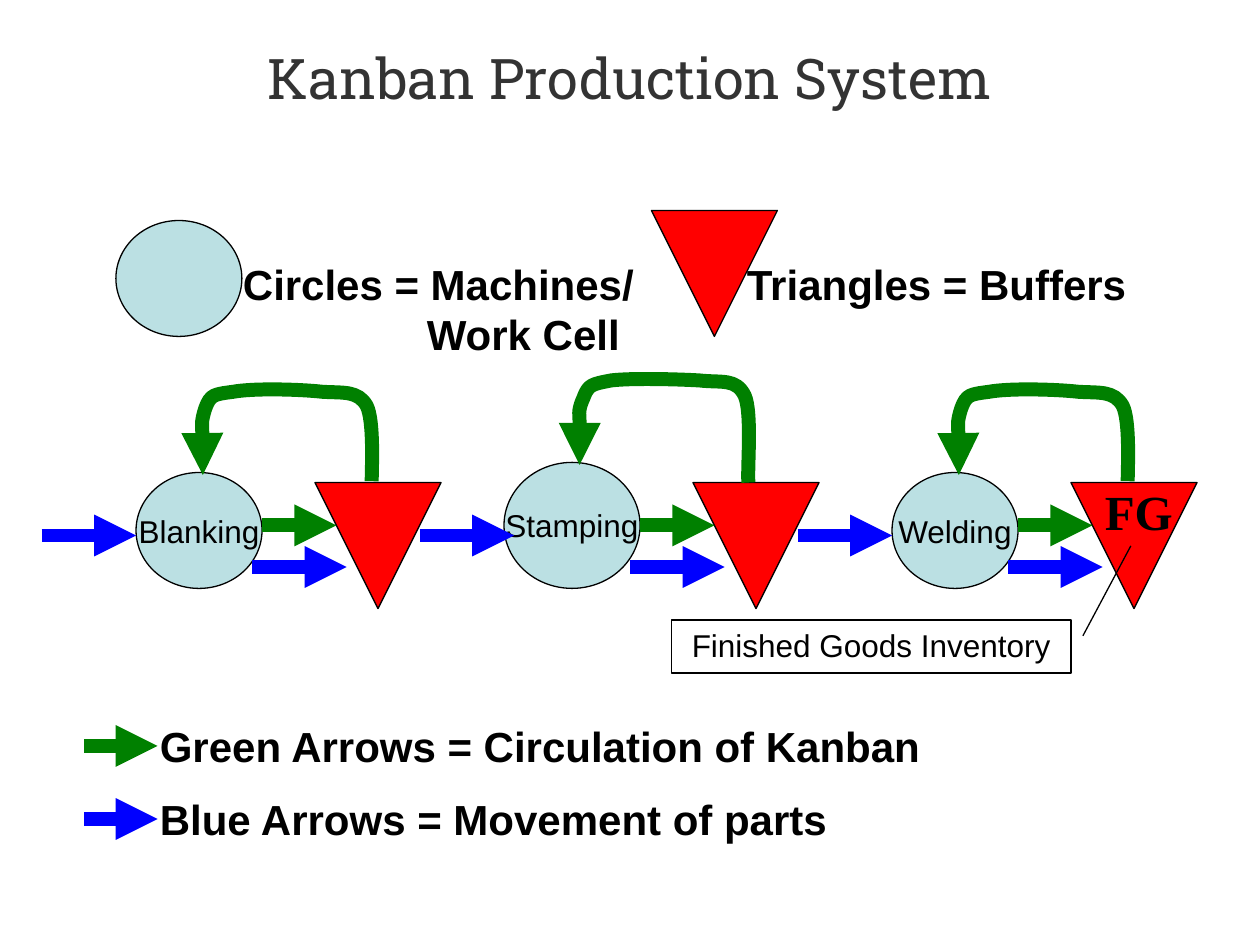
from lxml import etree
from pptx import Presentation
from pptx.dml.color import RGBColor
from pptx.enum import shapes, text
from pptx.oxml import ns
from pptx.util import Inches, Pt

BLACK = RGBColor(0, 0, 0)
GRAY = RGBColor(0x33, 0x33, 0x33)
AQUA = RGBColor(0xBB, 0xE0, 0xE3)
RED = RGBColor(0xFF, 0, 0)
GREEN = RGBColor(0, 0x80, 0)
BLUE = RGBColor(0, 0, 0xFF)

# Kanban loops: start point, then three points per curve, x from the station
LOW = [(2.95, 3.82), (2.95, 3.72), (2.97, 3.34), (2.91, 3.22),
       (2.84, 3.1), (2.73, 3.12), (2.56, 3.11),
       (2.38, 3.09), (2.01, 3.08), (1.85, 3.11),
       (1.7, 3.13), (1.67, 3.13), (1.63, 3.24),
       (1.59, 3.36), (1.61, 3.66), (1.61, 3.77)]
HIGH = [(2.94, 3.83), (2.93, 3.72), (2.97, 3.27), (2.91, 3.14),
        (2.84, 3), (2.73, 3.04), (2.55, 3.02),
        (2.38, 3.01), (2.01, 3), (1.85, 3.02),
        (1.7, 3.05), (1.67, 3.05), (1.63, 3.16),
        (1.58, 3.27), (1.61, 3.58), (1.6, 3.69)]

# Name, circle box, loop
CELLS = [("Blanking", (1.08, 3.75, 1, 0.92), LOW),
         ("Stamping", (4, 3.67, 1.08, 1), HIGH),
         ("Welding", (7.08, 3.75, 1, 0.92), LOW)]


def write(para, words, size, font="Arial", bold=False, color=BLACK):
    para.text = words
    para.font.size = Pt(size)
    para.font.name = font
    para.font.bold = bold
    para.font.color.rgb = color


def label(slide, box, words, size=24, font="Arial", bold=True, color=BLACK):
    frame = slide.shapes.add_textbox(*map(Inches, box)).text_frame
    frame.word_wrap = True
    write(frame.paragraphs[0], words, size, font, bold, color)
    return frame


def shape(slide, kind, box, fill=None):
    item = slide.shapes.add_shape(kind, *map(Inches, box))
    item.shadow.inherit = False
    if fill is None:
        item.fill.background()
    else:
        item.fill.solid()
        item.fill.fore_color.rgb = fill
    item.line.color.rgb = BLACK
    item.line.width = Pt(0.75)
    return item


def circle(slide, box, name=None):
    item = shape(slide, shapes.MSO_SHAPE.OVAL, box, AQUA)
    if name:
        frame = item.text_frame
        frame.word_wrap = False
        frame.vertical_anchor = text.MSO_ANCHOR.MIDDLE
        write(frame.paragraphs[0], name, 18)
        frame.paragraphs[0].alignment = text.PP_ALIGN.CENTER


def buffer(slide, left, top):
    kind = shapes.MSO_SHAPE.ISOSCELES_TRIANGLE
    shape(slide, kind, (left, top, 1, 1), RED).rotation = 180


def stroke(item, color):
    """Thick line with an arrowhead at its end."""
    item.line.color.rgb = color
    item.line.width = Pt(8)
    etree.SubElement(item.line._get_or_add_ln(), ns.qn("a:tailEnd"),
                     type="triangle")


def arrow(slide, left, right, y, color):
    item = slide.shapes.add_connector(
        shapes.MSO_CONNECTOR.STRAIGHT,
        Inches(left), Inches(y), Inches(right), Inches(y))
    stroke(item, color)
    etree.SubElement(item._element.spPr, ns.qn("a:effectLst"))


def loop(slide, points, shift):
    spots = [(Inches(x + shift), Inches(y)) for x, y in points]
    build = slide.shapes.build_freeform(*spots[0])
    build.add_line_segments(spots[1:], close=False)
    item = build.convert_to_shape()
    item.shadow.inherit = False
    item.fill.background()
    stroke(item, GREEN)
    # Turn each three line segments into one Bezier curve
    track = item._element.find(".//" + ns.qn("a:path"))
    steps = track.findall(ns.qn("a:lnTo"))
    for i in range(0, len(steps), 3):
        curve = etree.SubElement(track, ns.qn("a:cubicBezTo"))
        for step in steps[i:i + 3]:
            curve.append(step[0])
            track.remove(step)


def station(slide, shift, name, box, points):
    circle(slide, box, name)
    buffer(slide, 2.5 + shift, 3.83)
    arrow(slide, 0.33 + shift, 1.08 + shift, 4.25, BLUE)
    loop(slide, points, shift)
    arrow(slide, 2 + shift, 2.75 + shift, 4.5, BLUE)
    arrow(slide, 2.08 + shift, 2.67 + shift, 4.17, GREEN)


def callout(slide):
    item = shape(slide, shapes.MSO_SHAPE.LINE_CALLOUT_1,
                 (5.33, 4.92, 3.17, 0.42))
    for i, value in enumerate((0.3, 1.03, -1.4, 1.15)):
        item.adjustments[i] = value
    frame = item.text_frame
    frame.word_wrap = True
    frame.vertical_anchor = text.MSO_ANCHOR.TOP
    frame.margin_left = frame.margin_right = Inches(0.05)
    frame.margin_top = frame.margin_bottom = Inches(0.05)
    write(frame.paragraphs[0], "Finished Goods Inventory", 18)
    frame.paragraphs[0].alignment = text.PP_ALIGN.CENTER


def main():
    deck = Presentation()
    deck.slide_width, deck.slide_height = Inches(10), Inches(7.5)
    slide = deck.slides.add_slide(deck.slide_layouts[6])

    # Title
    frame = label(slide, (0.5, 0.3, 9, 0.62), "Kanban Production System",
                  32, "Roboto Slab", False, GRAY)
    frame.vertical_anchor = text.MSO_ANCHOR.MIDDLE
    frame.paragraphs[0].alignment = text.PP_ALIGN.CENTER

    # Production line
    for i, (name, box, points) in enumerate(CELLS):
        station(slide, 3 * i, name, box, points)
    label(slide, (8.67, 3.77, 0.75, 0.57), "FG", 28, "Times New Roman")
    callout(slide)

    # Shape key
    circle(slide, (0.92, 1.75, 1, 0.92))
    buffer(slide, 5.17, 1.67)
    frame = label(slide, (1.83, 2, 3.33, 0.9), "Circles = Machines/")
    cell = frame.add_paragraph()
    cell._p.get_or_add_pPr().set("marL", str(Inches(1.46)))
    write(cell, "Work Cell", 24, bold=True)
    label(slide, (5.83, 2, 3.33, 0.5), "Triangles = Buffers")

    # Arrow key
    arrow(slide, 0.67, 1.25, 5.92, GREEN)
    label(slide, (1.17, 5.67, 6.25, 0.5),
          "Green Arrows = Circulation of Kanban")
    arrow(slide, 0.67, 1.25, 6.5, BLUE)
    label(slide, (1.17, 6.25, 5.75, 0.5), "Blue Arrows = Movement of parts")

    deck.save("out.pptx")


if __name__ == "__main__":
    main()
